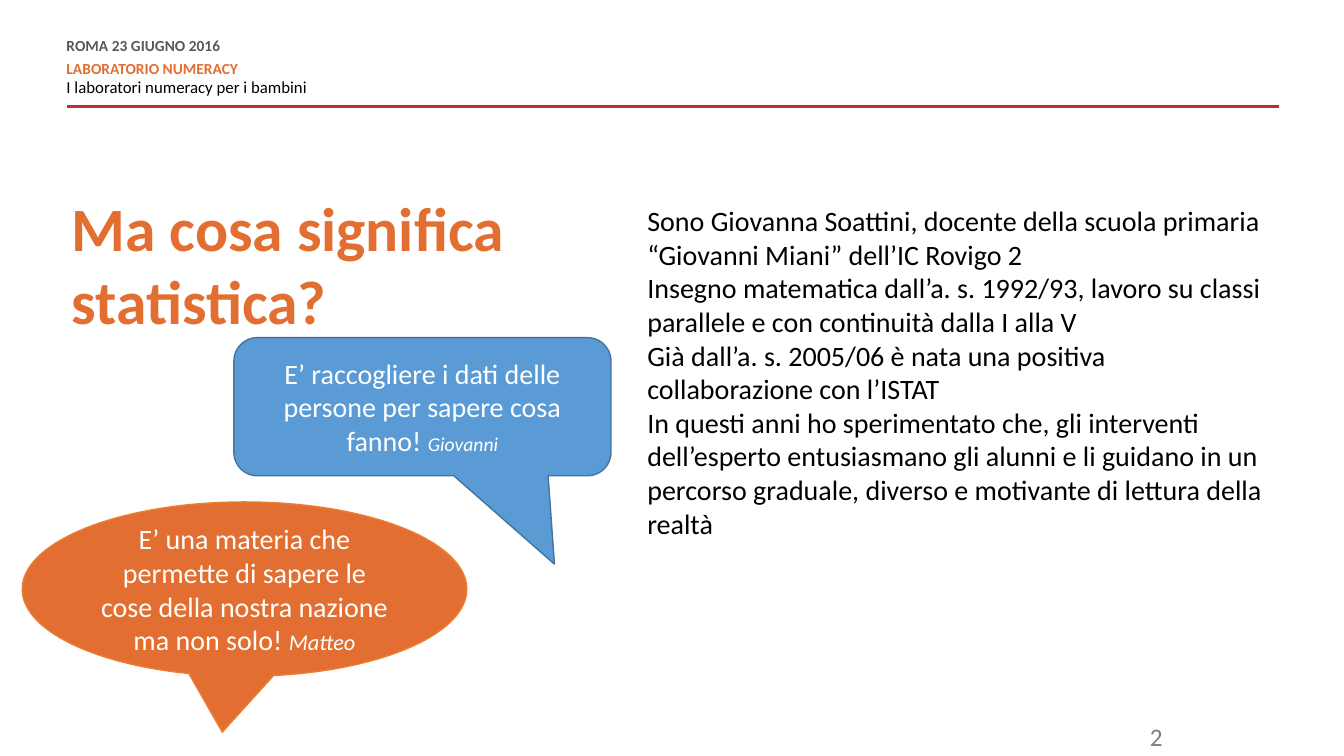
from dataclasses import dataclass

from lxml import etree
from pptx import Presentation
from pptx.dml.color import RGBColor
from pptx.enum.shapes import MSO_CONNECTOR, MSO_SHAPE
from pptx.enum.text import MSO_ANCHOR, MSO_AUTO_SIZE, PP_ALIGN
from pptx.oxml.ns import qn
from pptx.util import Inches, Pt

ORANGE = RGBColor(0xE2, 0x6F, 0x31)
ORANGE_EDGE = RGBColor(0xED, 0x7D, 0x31)
BLUE = RGBColor(0x5B, 0x9B, 0xD5)
BLUE_EDGE = RGBColor(0x43, 0x73, 0x9E)
RED = RGBColor(0xC7, 0x2A, 0x31)
DARK_GRAY = RGBColor(0x59, 0x59, 0x59)
GRAY = RGBColor(0x7F, 0x7F, 0x7F)
BLACK = RGBColor(0, 0, 0)
WHITE = RGBColor(0xFF, 0xFF, 0xFF)

Box = tuple[float, float, float, float]


@dataclass
class HeaderLine:
    text: str
    size: int
    color: RGBColor
    bold: bool
    before: int
    after: int


@dataclass
class Callout:
    kind: MSO_SHAPE
    box: Box
    adjustments: tuple[float, ...]
    fill: RGBColor
    edge: RGBColor
    quote: str
    child: str
    child_size: int


HEADER = [
    HeaderLine("ROMA 23 GIUGNO 2016", 11, DARK_GRAY, True, 0, 6),
    HeaderLine("LABORATORIO NUMERACY", 11, ORANGE, True, 0, 0),
    HeaderLine("I laboratori numeracy per i bambini", 12, BLACK, False, 3, 0),
]

BIOGRAPHY = [
    "Sono Giovanna Soattini, docente della scuola primaria “Giovanni Miani” dell’IC Rovigo 2",
    "Insegno matematica dall’a. s. 1992/93, lavoro su classi parallele e con continuità "
    "dalla I alla V",
    "Già dall’a. s. 2005/06 è nata una positiva collaborazione con l’ISTAT",
    "In questi anni ho sperimentato che, gli interventi dell’esperto entusiasmano gli alunni "
    "e li guidano in un percorso graduale, diverso e motivante di lettura della realtà",
]

CALLOUTS = [
    Callout(MSO_SHAPE.ROUNDED_RECTANGULAR_CALLOUT, (2.32, 3.35, 3.74, 1.37),
            (0.35, 1.14, 0.17), BLUE, BLUE_EDGE,
            "E’ raccogliere i dati delle persone per sapere cosa fanno! ", "Giovanni", 14),
    Callout(MSO_SHAPE.OVAL_CALLOUT, (0.22, 4.98, 4.41, 1.73),
            (-0.05, 0.82), ORANGE, ORANGE_EDGE,
            "E’ una materia che permette di sapere le cose della nostra nazione ma non solo! ",
            "Matteo", 16),
]


def inches(box: Box) -> list[int]:
    return [Inches(v) for v in box]


def set_attrs(obj, **values) -> None:
    for name, value in values.items():
        setattr(obj, name, value)


def add_run(p, text: str, size: int, color: RGBColor, bold=False, italic=False) -> None:
    r = p.add_run()
    r.text = text
    set_attrs(r.font, name="Calibri", size=Pt(size), bold=bold, italic=italic)
    r.font.color.rgb = color


def set_frame(tf, inset: bool = True, anchor=MSO_ANCHOR.TOP) -> None:
    set_attrs(tf, word_wrap=True, auto_size=MSO_AUTO_SIZE.NONE, vertical_anchor=anchor)
    if not inset:
        set_attrs(tf, margin_left=0, margin_top=0, margin_right=0, margin_bottom=0)


def paragraphs(tf, count: int) -> list:
    """Return the frame's paragraphs after extending it to count."""
    for _ in range(count - 1):
        tf.add_paragraph()
    return list(tf.paragraphs)


def add_header(s) -> None:
    y = Inches(1.06)
    rule = s.shapes.add_connector(MSO_CONNECTOR.STRAIGHT, Inches(0.66), y, Inches(12.69), y)
    rule.line.color.rgb = RED
    rule.line.width = Pt(2)
    etree.SubElement(rule._element.spPr, qn("a:effectLst"))

    tf = s.shapes.add_textbox(*inches((0.66, 0.39, 8.34, 0.59))).text_frame
    set_frame(tf, inset=False)
    for p, line in zip(paragraphs(tf, len(HEADER)), HEADER):
        set_attrs(p, line_spacing=Pt(10.8), space_before=Pt(line.before),
                  space_after=Pt(line.after))
        add_run(p, line.text, line.size, line.color, line.bold)


def fill_placeholder(sp, box: Box, texts: list[str], size: int, color: RGBColor,
                     bold: bool, inset: bool) -> None:
    left, top, width, height = inches(box)
    set_attrs(sp, left=left, top=top, width=width, height=height)
    tf = sp.text_frame
    set_frame(tf, inset)
    for p, text in zip(paragraphs(tf, len(texts)), texts):
        set_attrs(p, alignment=PP_ALIGN.LEFT, line_spacing=1.0, space_before=Pt(0))
        add_run(p, text, size, color, bold)


def add_callout(s, callout: Callout) -> None:
    sp = s.shapes.add_shape(callout.kind, *inches(callout.box))
    sp.shadow.inherit = False
    for i, value in enumerate(callout.adjustments):
        sp.adjustments[i] = value
    sp.fill.solid()
    sp.fill.fore_color.rgb = callout.fill
    sp.line.color.rgb = callout.edge
    sp.line.width = Pt(1)
    set_frame(sp.text_frame, anchor=MSO_ANCHOR.MIDDLE)
    p = sp.text_frame.paragraphs[0]
    p.alignment = PP_ALIGN.CENTER
    add_run(p, callout.quote, 20, WHITE)
    add_run(p, callout.child, callout.child_size, WHITE, italic=True)


def add_page_number(s) -> None:
    tf = s.shapes.add_textbox(*inches((8.63, 7.11, 3, 0.4))).text_frame
    set_frame(tf)
    p = tf.paragraphs[0]
    p.alignment = PP_ALIGN.RIGHT
    add_run(p, "2", 18, GRAY)


def main() -> None:
    prs = Presentation()
    set_attrs(prs, slide_width=Inches(13.33), slide_height=Inches(7.5))
    s = prs.slides.add_slide(prs.slide_layouts[0])
    add_header(s)
    add_page_number(s)
    fill_placeholder(s.placeholders[1], (6.32, 1.97, 6.38, 3.47), BIOGRAPHY,
                     20, BLACK, bold=False, inset=True)
    fill_placeholder(s.shapes.title, (0.71, 1.88, 4.79, 2.8),
                     ["Ma cosa significa statistica?"], 44, ORANGE, bold=True, inset=False)
    for callout in CALLOUTS:
        add_callout(s, callout)
    prs.save("out.pptx")


if __name__ == "__main__":
    main()
